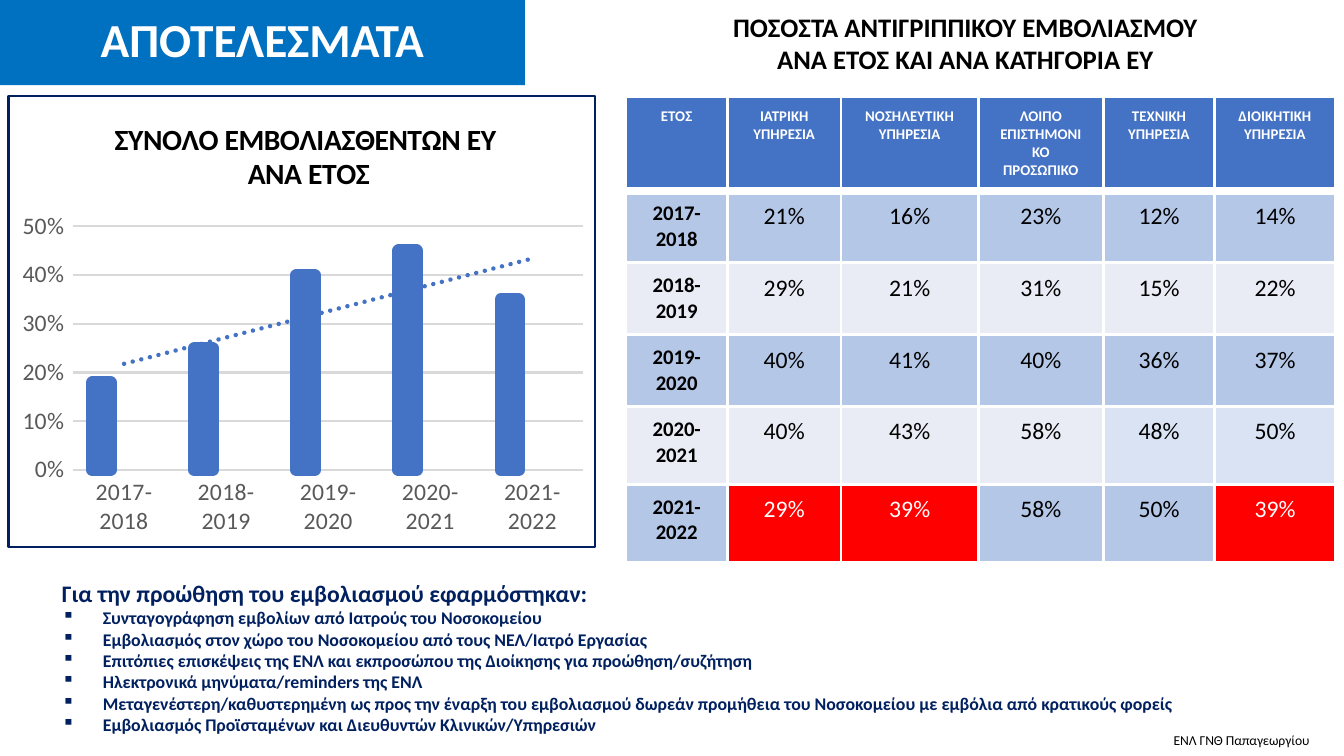
from dataclasses import dataclass

import pptx
import pptx.chart.data
import pptx.dml.color
import pptx.enum.chart
import pptx.enum.shapes
import pptx.enum.text
import pptx.oxml
import pptx.oxml.ns
import pptx.util

PX = 4500  # a 16 by 9 cm slide is 1280 by 720 px
FONT = "Calibri"
WHITE, BLACK, NAVY = "FFFFFF", "000000", "002060"
BLUE, TITLE_BLUE, GREY, GRID = "4472C4", "0070C0", "595959", "D9D9D9"
BAND_DARK, BAND_LIGHT, BAND_PALE, RED = "B4C7E7", "E9EBF5", "DAE3F3", "FF0000"
ALIGN = pptx.enum.text.PP_ALIGN
ANCHOR = pptx.enum.text.MSO_ANCHOR

YEARS = ["2017-2018", "2018-2019", "2019-2020", "2020-2021", "2021-2022"]
TOTALS = [0.18, 0.25, 0.4, 0.45, 0.35]
HEADERS = ["ΕΤΟΣ", "ΙΑΤΡΙΚΗ ΥΠΗΡΕΣΙΑ", "ΝΟΣΗΛΕΥΤΙΚΗ ΥΠΗΡΕΣΙΑ",
           "ΛΟΙΠΟ ΕΠΙΣΤΗΜΟΝΙΚΟ ΠΡΟΣΩΠΙΚΟ", "ΤΕΧΝΙΚΗ ΥΠΗΡΕΣΙΑ", "ΔΙΟΙΚΗΤΙΚΗ ΥΠΗΡΕΣΙΑ"]
RATES = [[21, 16, 23, 12, 14], [29, 21, 31, 15, 22], [40, 41, 40, 36, 37],
         [40, 43, 58, 48, 50], [29, 39, 58, 50, 39]]
COLUMN_WIDTHS = [97, 108, 131, 119, 106, 115]
ROW_HEIGHTS = [86, 67, 67, 67, 74, 74]
TABLE_HEIGHT = 441
PALE_CELLS = {(4, 4), (4, 5)}
BULLET_INDENT = 39
MEASURES = [
    "Συνταγογράφηση εμβολίων από Ιατρούς του Νοσοκομείου ",
    "Εμβολιασμός στον χώρο του Νοσοκομείου από τους ΝΕΛ/Ιατρό Εργασίας ",
    "Επιτόπιες επισκέψεις της ΕΝΛ και εκπροσώπου της Διοίκησης για προώθηση/συζήτηση ",
    "Ηλεκτρονικά μηνύματα/reminders της ΕΝΛ ",
    "Μεταγενέστερη/καθυστερημένη ως προς την έναρξη του εμβολιασμού δωρεάν προμήθεια "
    "του Νοσοκομείου με εμβόλια από κρατικούς φορείς ",
    "Εμβολιασμός Προϊσταμένων και Διευθυντών Κλινικών/Υπηρεσιών ",
]


@dataclass
class TextBlock:
    box: tuple[int, int, int, int]
    lines: list[str]
    size: float
    color: str
    bold: bool = True
    align: ALIGN = ALIGN.CENTER
    anchor: ANCHOR = ANCHOR.TOP
    inset: tuple[int, int] = (20, 10)
    spacing: float = 1.0
    fill: str | None = None


BANNER = TextBlock((0, 0, 500, 81), ["ΑΠΟΤΕΛΕΣΜΑΤΑ"], 16, WHITE, anchor=ANCHOR.MIDDLE,
                   inset=(10, 5), spacing=0.9, fill=TITLE_BLUE)
TABLE_TITLE = TextBlock((566, 0, 712, 81), ["ΠΟΣΟΣΤΑ ΑΝΤΙΓΡΙΠΠΙΚΟΥ ΕΜΒΟΛΙΑΣΜΟΥ ",
                        "ΑΝΑ ΕΤΟΣ ΚΑΙ ΑΝΑ ΚΑΤΗΓΟΡΙΑ ΕΥ "], 9, BLACK)
FOOTER = TextBlock((1074, 694, 217, 24), ["ΕΝΛ ΓΝΘ Παπαγεωργίου"], 4.6, BLACK, bold=False,
                   anchor=ANCHOR.MIDDLE, inset=(10, 5), spacing=0.8)
ACTIONS = TextBlock((39, 541, 1164, 171), ["Για την προώθηση του εμβολιασμού εφαρμόστηκαν: ",
                    *MEASURES], 6, NAVY, align=ALIGN.JUSTIFY)


def rgb(color: str) -> pptx.dml.color.RGBColor:
    return pptx.dml.color.RGBColor.from_string(color)


def emu(box: tuple[int, ...]) -> list[int]:
    return [length * PX for length in box]


def style_font(font, size: float, color: str, bold: bool = False) -> None:
    font.name, font.size, font.bold = FONT, pptx.util.Pt(size), bold
    font.color.rgb = rgb(color)


def xml(markup: str):
    """Parse one element, declaring the chart and drawing namespaces."""
    head, rest = markup.split(">", 1)
    slash = "/" if head.endswith("/") else ""
    names = pptx.oxml.ns.nsdecls("a", "c")
    return pptx.oxml.parse_xml(f"{head.rstrip('/')} {names}{slash}>{rest}")


def solid(color: str) -> str:
    return f'<a:solidFill><a:srgbClr val="{color}"/></a:solidFill>'


def layout(**places: float):
    """Build a manual chart layout from fractions of the chart size."""
    target = '<c:layoutTarget val="inner"/>' if "w" in places else ""
    values = "".join(f'<c:{name} val="{value}"/>' for name, value in places.items())
    return xml(f'<c:layout><c:manualLayout>{target}<c:xMode val="edge"/><c:yMode val="edge"/>'
               f'{values}</c:manualLayout></c:layout>')


def add_text(slide, block: TextBlock):
    if block.fill:
        shape = slide.shapes.add_shape(pptx.enum.shapes.MSO_SHAPE.RECTANGLE, *emu(block.box))
        shape.shadow.inherit = False
        shape.fill.solid()
        shape.fill.fore_color.rgb = rgb(block.fill)
        shape.line.fill.background()
    else:
        shape = slide.shapes.add_textbox(*emu(block.box))
    frame = shape.text_frame
    frame.word_wrap = True
    frame.vertical_anchor = block.anchor
    frame.margin_left = frame.margin_right = block.inset[0] * PX
    frame.margin_top = frame.margin_bottom = block.inset[1] * PX
    frame.text = "\n".join(block.lines)
    for paragraph in frame.paragraphs:
        paragraph.alignment = block.align
        paragraph.line_spacing = block.spacing
        style_font(paragraph.runs[0].font, block.size, block.color, block.bold)
    return shape


def add_actions(slide) -> None:
    heading, *bullets = add_text(slide, ACTIONS).text_frame.paragraphs
    heading.runs[0].font.size = pptx.util.Pt(8)
    for paragraph in bullets:
        properties = paragraph._p.get_or_add_pPr()
        properties.set("marL", str(BULLET_INDENT * PX))
        properties.set("indent", str(-BULLET_INDENT * PX))
        properties.append(xml('<a:buChar char="▪"/>'))


def add_totals_chart(slide) -> None:
    data = pptx.chart.data.CategoryChartData(number_format="0%")
    data.categories = YEARS
    data.add_series("Series 1", TOTALS)
    for name in ("Series 2", "Series 3"):
        data.add_series(name, [None] * len(YEARS))
    kind = pptx.enum.chart.XL_CHART_TYPE.COLUMN_CLUSTERED
    chart = slide.shapes.add_chart(kind, *emu((7, 90, 561, 432)), data).chart
    style_font(chart.font, 10, BLACK)
    chart.has_legend = False
    chart.has_title = True
    title = chart.chart_title
    title.text_frame.text = "ΣΥΝΟΛΟ ΕΜΒΟΛΙΑΣΘΕΝΤΩΝ ΕΥ \nΑΝΑ ΕΤΟΣ"
    for paragraph in title.text_frame.paragraphs:
        style_font(paragraph.runs[0].font, 10, BLACK, True)

    # Bars
    plot = chart.plots[0]
    plot.gap_width, plot.overlap, plot.vary_by_categories = 219, -27, False
    for series, color in zip(plot.series, (BLUE, "ED7D31", "A5A5A5")):
        series.format.fill.solid()
        series.format.fill.fore_color.rgb = rgb(color)
    totals = plot.series[0]
    totals.format.line.color.rgb = rgb(BLUE)
    totals.format.line.width = pptx.util.Pt(4.25)
    totals.format.line._ln.append(xml("<a:round/>"))

    # Linear trend
    totals._element.find(pptx.oxml.ns.qn("c:cat")).addprevious(xml(
        f'<c:trendline><c:spPr><a:ln w="19050" cap="rnd">{solid(BLUE)}'
        '<a:prstDash val="sysDot"/></a:ln></c:spPr><c:trendlineType val="linear"/>'
        '<c:dispRSqr val="0"/><c:dispEq val="0"/></c:trendline>'))

    # Axes
    values, categories = chart.value_axis, chart.category_axis
    for axis in (values, categories):
        axis.major_tick_mark = axis.minor_tick_mark = pptx.enum.chart.XL_TICK_MARK.NONE
        style_font(axis.tick_labels.font, 8, GREY)
    values.minimum_scale, values.maximum_scale, values.major_unit = 0, 0.5, 0.1
    values.tick_labels.number_format = "0%"
    values.tick_labels.number_format_is_linked = False
    values.format.line.fill.background()
    for line in (values.major_gridlines.format.line, categories.format.line):
        line.color.rgb = rgb(GRID)
        line.width = pptx.util.Pt(0.75)

    # Title and plot positions, chart frame
    area = chart._chartSpace.chart.plotArea
    for element in (area, title._element):
        for old in element.findall(pptx.oxml.ns.qn("c:layout")):
            element.remove(old)
    area.insert(0, layout(x=0.11, y=0.29, w=0.87, h=0.54))
    title._element.find(pptx.oxml.ns.qn("c:tx")).addnext(layout(x=0.17, y=0.04))
    chart._chartSpace.chart.addnext(xml(
        f'<c:spPr><a:noFill/><a:ln w="9525">{solid(NAVY)}</a:ln></c:spPr>'))


def fill_cell(cell, text: str, size: float, color: str, bold: bool, fill: str, row: int) -> None:
    cell.text = text
    paragraph = cell.text_frame.paragraphs[0]
    paragraph.alignment = ALIGN.CENTER
    style_font(paragraph.runs[0].font, size, color, bold)
    cell.fill.solid()
    cell.fill.fore_color.rgb = rgb(fill)
    widths = {"L": 1, "R": 1, "T": 3 if row == 1 else 1, "B": 3 if row == 0 else 1}
    for index, (side, width) in enumerate(widths.items()):
        border = xml(f'<a:ln{side} w="{width * 12700}">{solid(WHITE)}</a:ln{side}>')
        cell._tc.get_or_add_tcPr().insert(index, border)


def add_rates_table(slide) -> None:
    box = (596, 92, sum(COLUMN_WIDTHS), TABLE_HEIGHT)
    graphic_frame = slide.shapes.add_table(len(ROW_HEIGHTS), len(COLUMN_WIDTHS), *emu(box))
    table = graphic_frame.table
    for column, width in zip(table.columns, COLUMN_WIDTHS):
        column.width = width * PX
    for table_row, height in zip(table.rows, ROW_HEIGHTS):
        table_row.height = height * PX
    graphic_frame.height = TABLE_HEIGHT * PX
    for index, header in enumerate(HEADERS):
        fill_cell(table.cell(0, index), header, 5, WHITE, True, BLUE, 0)
    for row, (year, rates) in enumerate(zip(YEARS, RATES), 1):
        band = BAND_DARK if row % 2 else BAND_LIGHT
        fill_cell(table.cell(row, 0), year, 7, BLACK, True, band, row)
        previous = RATES[row - 2] if row > 1 else rates
        for column, (rate, before) in enumerate(zip(rates, previous), 1):
            fell = rate < before  # a drop from the year before is marked red
            fill = RED if fell else BAND_PALE if (row, column) in PALE_CELLS else band
            fill_cell(table.cell(row, column), f"{rate}%", 8, WHITE if fell else BLACK,
                      False, fill, row)


def main() -> None:
    presentation = pptx.Presentation()
    presentation.slide_width, presentation.slide_height = emu((1280, 720))
    slide = presentation.slides.add_slide(presentation.slide_layouts[6])
    add_text(slide, BANNER)
    add_totals_chart(slide)
    add_rates_table(slide)
    add_text(slide, TABLE_TITLE)
    add_text(slide, FOOTER)
    add_actions(slide)
    presentation.save("out.pptx")


if __name__ == "__main__":
    main()
